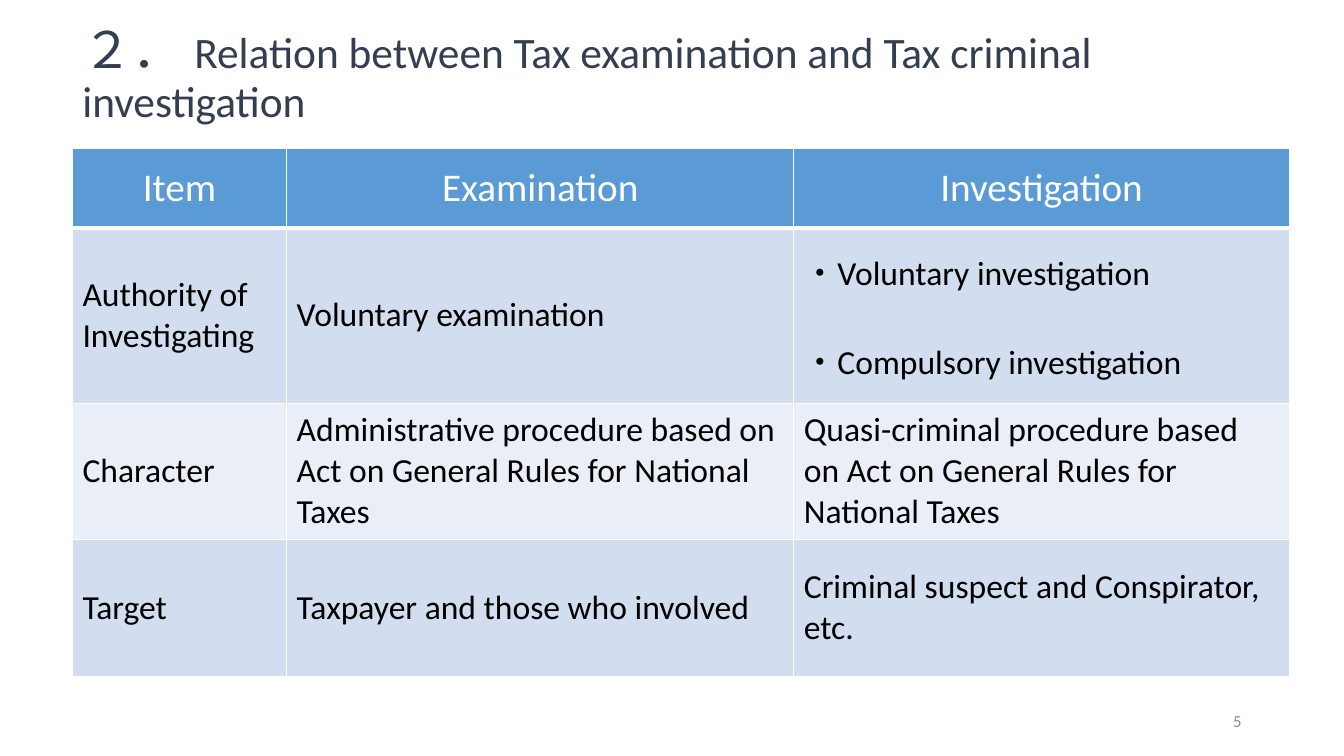
from lxml import etree
from pptx import Presentation
from pptx import util as u
from pptx.dml import color
from pptx.enum import text
from pptx.oxml import ns

PX = 9525
FONT = "Calibri"
WHITE, BLACK, NAVY, GREY = "FFFFFF", "000000", "333F50", "8C8C8C"
HEAD, BANDS = "5B9BD5", ("D2DEEF", "EAEFF7")
COLS = (204, 483, 472)
ROWS = (76, 167, 130, 130)
GRID = (
    ("Item", "Examination", "Investigation"),
    ("Authority of Investigating", "Voluntary examination",
     "・Voluntary investigation\n・Compulsory investigation"),
    ("Character",
     "Administrative procedure based on Act on General Rules for National Taxes",
     "Quasi-criminal procedure based on Act on General Rules for National Taxes"),
    ("Target", "Taxpayer and those who involved",
     "Criminal suspect and Conspirator, etc."),
)


def px(size):
    """Turn pixels into EMU."""
    return u.Emu(size * PX)


def rgb(code):
    """Turn a hex string into a colour."""
    return color.RGBColor.from_string(code)


def put(item, form):
    """Set each attribute of the format on the item."""
    for name, value in form.items():
        setattr(item, name, value)


def add_run(para, words, size, ink):
    """Add one run of text to a paragraph."""
    run = para.add_run()
    run.text = words
    put(run.font, {"name": FONT, "size": u.Pt(size)})
    run.font.color.rgb = rgb(ink)


def add_text(slide, box, runs, form):
    """Add a text box that holds one paragraph of runs."""
    frame = slide.shapes.add_textbox(*map(px, box)).text_frame
    put(frame, {"word_wrap": True, "vertical_anchor": text.MSO_ANCHOR.MIDDLE})
    para = frame.paragraphs[0]
    put(para, form)
    for run in runs:
        add_run(para, *run)


def add_edge(cell, base):
    """Draw white lines round a cell, with the given base width."""
    props = cell._tc.get_or_add_tcPr()
    for spot, (side, width) in enumerate(zip("LRTB", (1, 1, 1, base))):
        line = etree.Element(ns.qn("a:ln" + side), w=str(u.Pt(width)))
        fill = etree.SubElement(line, ns.qn("a:solidFill"))
        etree.SubElement(fill, ns.qn("a:srgbClr"), val=WHITE)
        props.insert(spot, line)


def fill_cell(cell, words, row):
    """Write and style one cell according to its row."""
    top = row == 0
    size, ink = (28, WHITE) if top else (24, BLACK)
    side = text.PP_ALIGN.CENTER if top else text.PP_ALIGN.LEFT
    cell.vertical_anchor = text.MSO_ANCHOR.MIDDLE
    cell.fill.solid()
    cell.fill.fore_color.rgb = rgb(HEAD if top else BANDS[(row - 1) % 2])
    add_edge(cell, 3 if top else 1)
    frame = cell.text_frame
    for spot, part in enumerate(words.split("\n")):
        para = frame.add_paragraph() if spot else frame.paragraphs[0]
        put(para, {"alignment": side, "space_before": u.Pt(29 if spot else 0)})
        add_run(para, part, size, ink)


def add_grid(slide, left, top):
    """Add the table of items."""
    box = map(px, (left, top, sum(COLS), sum(ROWS)))
    table = slide.shapes.add_table(len(ROWS), len(COLS), *box).table
    for col, width in zip(table.columns, COLS):
        col.width = px(width)
    for row, height in zip(table.rows, ROWS):
        row.height = px(height)
    for row, line in enumerate(GRID):
        for col, words in enumerate(line):
            fill_cell(table.cell(row, col), words, row)


def main():
    """Build the slide and save it."""
    deck = Presentation()
    put(deck, {"slide_width": px(1280), "slide_height": px(720)})
    slide = deck.slides.add_slide(deck.slide_layouts[6])
    title = "Relation between Tax examination and Tax criminal investigation"
    add_text(slide, (69, 27, 1160, 91),
             (("２． ", 36, NAVY), (title, 31, NAVY)), {"line_spacing": 0.9})
    add_grid(slide, 69, 141)
    add_text(slide, (904, 667, 288, 38), (("5", 12, GREY),),
             {"alignment": text.PP_ALIGN.RIGHT})
    deck.save("out.pptx")


if __name__ == "__main__":
    main()
